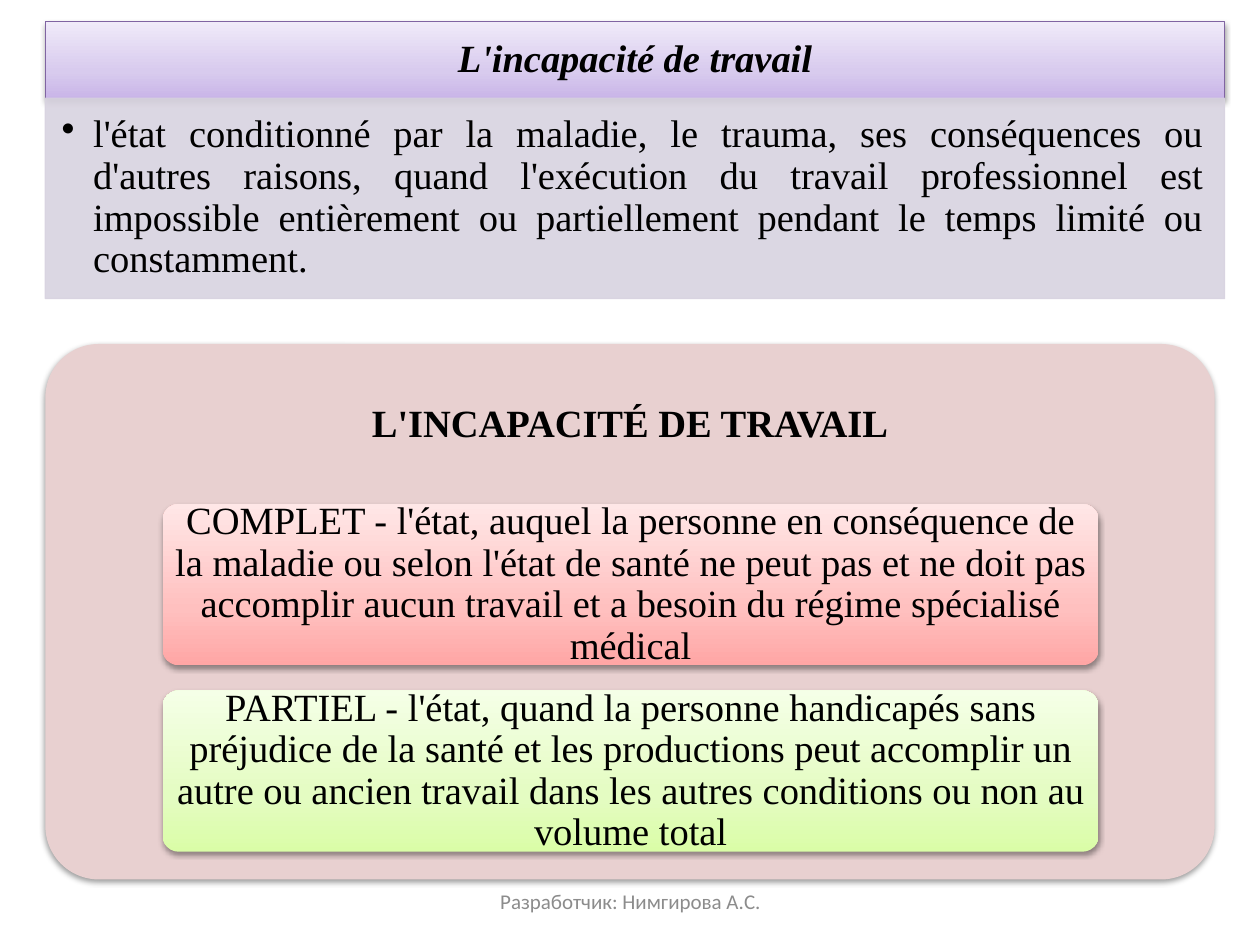
"""Build a slide that defines work incapacity and its two kinds."""
import copy

import pptx
import pptx.dml.color
import pptx.enum.shapes
import pptx.enum.text
import pptx.oxml
import pptx.oxml.ns
import pptx.util
from pptx.util import Inches

THEME = {
    "serif": "Times New Roman", "sans": "Calibri", "body": 22, "small": 12,
    "ink": "000000", "gray": "8C8C8C", "edge": "8064A2",
    "lilac": "D8D3E0", "rose": "E8D0D0",
    "violet": ("C9B5E8", "D8CBEE", "F0EAF9"),
    "red": ("FFA6A5", "FFC0BF", "FFE7E7"),
    "green": ("DAFDA7", "E4FCC2", "F5FFE7"),
}
KINDS = pptx.enum.shapes.MSO_SHAPE
ALIGN = pptx.enum.text.PP_ALIGN
ANCHOR = pptx.enum.text.MSO_ANCHOR
NS = pptx.oxml.ns.nsdecls("a")
qn = pptx.oxml.ns.qn
rgb = pptx.dml.color.RGBColor.from_string

deck = pptx.Presentation()
deck.slide_width, deck.slide_height = Inches(10), Inches(7.5)
slide = deck.slides.add_slide(deck.slide_layouts[6])


def panel(kind, box, fill, edge=None, shadow=True):
    """Add a filled shape; a tuple fill runs upward as a gradient."""
    shape = slide.shapes.add_shape(kind, *map(Inches, box))
    if kind == KINDS.ROUNDED_RECTANGLE:
        shape.adjustments[0] = 0.1
    if isinstance(fill, tuple):
        shape.fill.gradient()
        shape.fill.gradient_angle = 90
        stops = next(shape._element.spPr.iter(qn("a:gsLst")))
        stops.append(copy.deepcopy(stops[0]))
        for stop, spot, color in zip(shape.fill.gradient_stops, (0, 0.35, 1), fill):
            stop.position = spot
            stop.color.rgb = rgb(color)
    else:
        shape.fill.solid()
        shape.fill.fore_color.rgb = rgb(fill)
    if edge:
        shape.line.color.rgb = rgb(edge)
        shape.line.width = pptx.util.Pt(0.75)
    else:
        shape.line.fill.background()
    shape.shadow.inherit = False
    if shadow:
        shape._element.spPr.find(qn("a:effectLst")).append(pptx.oxml.parse_xml(
            f'<a:outerShdw {NS} blurRad="40000" dist="20000" dir="5400000" rotWithShape="0">'
            '<a:srgbClr val="000000"><a:alpha val="38000"/></a:srgbClr></a:outerShdw>'))
    return shape


def write(shape, text, pads, size="body", face="serif", color="ink", space=0.9):
    """Fill a shape with one centred paragraph and return it."""
    frame = shape.text_frame
    frame.word_wrap = True
    frame.vertical_anchor = ANCHOR.MIDDLE
    (frame.margin_left, frame.margin_top,
     frame.margin_right, frame.margin_bottom) = map(Inches, pads)
    para = frame.paragraphs[0]
    para.text = text
    para.alignment = ALIGN.CENTER
    para.line_spacing = space
    para.font.size = pptx.util.Pt(THEME[size])
    para.font.name = THEME[face]
    para.font.color.rgb = rgb(THEME[color])
    return para


head = panel(KINDS.RECTANGLE, (0.36, 0.17, 9.36, 0.61), THEME["violet"], THEME["edge"])
para = write(head, "L'incapacité de travail", (0.17, 0.1, 0.17, 0.1))
para.font.bold = para.font.italic = True

body = panel(KINDS.RECTANGLE, (0.36, 0.78, 9.36, 1.59), THEME["lilac"], THEME["lilac"], False)
for tint in body._element.spPr.iter(qn("a:srgbClr")):
    tint.append(pptx.oxml.parse_xml(f'<a:alpha {NS} val="90000"/>'))
para = write(
    body,
    "l'état conditionné par la maladie, le trauma, ses conséquences ou d'autres raisons, "
    "quand l'exécution du travail professionnel est impossible entièrement ou partiellement "
    "pendant le temps limité ou constamment.",
    (0.13, 0.13, 0.17, 0.19))
body.text_frame.vertical_anchor = ANCHOR.TOP
para.alignment = ALIGN.JUSTIFY
props = para._p.get_or_add_pPr()
props.set("marL", str(Inches(0.25)))
props.set("indent", str(Inches(-0.25)))
mark = pptx.oxml.parse_xml(f'<a:buChar {NS} char="•"/>')
props.find(qn("a:defRPr")).addprevious(mark)

panel(KINDS.ROUNDED_RECTANGLE, (0.36, 2.73, 9.28, 4.25), THEME["rose"])
title = slide.shapes.add_textbox(*map(Inches, (0.36, 2.73, 9.28, 1.28)))
write(title, "L'INCAPACITÉ DE TRAVAIL", (0.09,) * 4).font.bold = True

cards = (
    ("red", "COMPLET - l'état, auquel la personne en conséquence de la maladie ou selon "
     "l'état de santé ne peut pas et ne doit pas accomplir aucun travail et a besoin du "
     "régime spécialisé médical"),
    ("green", "PARTIEL - l'état, quand la personne handicapés sans préjudice de la santé "
     "et les productions peut accomplir un autre ou ancien travail dans les autres "
     "conditions ou non au volume total"),
)
for row, (hue, text) in enumerate(cards):
    card = panel(KINDS.ROUNDED_RECTANGLE, (1.29, 4 + 1.48 * row, 7.43, 1.28), THEME[hue])
    write(card, text, (0.06, 0.05, 0.06, 0.05))

foot = slide.shapes.add_textbox(*map(Inches, (3.42, 6.95, 3.17, 0.4)))
write(foot, "Разработчик: Нимгирова А.С.", (0.1, 0.05, 0.1, 0.05), "small", "sans", "gray", 1.0)

deck.save("out.pptx")
